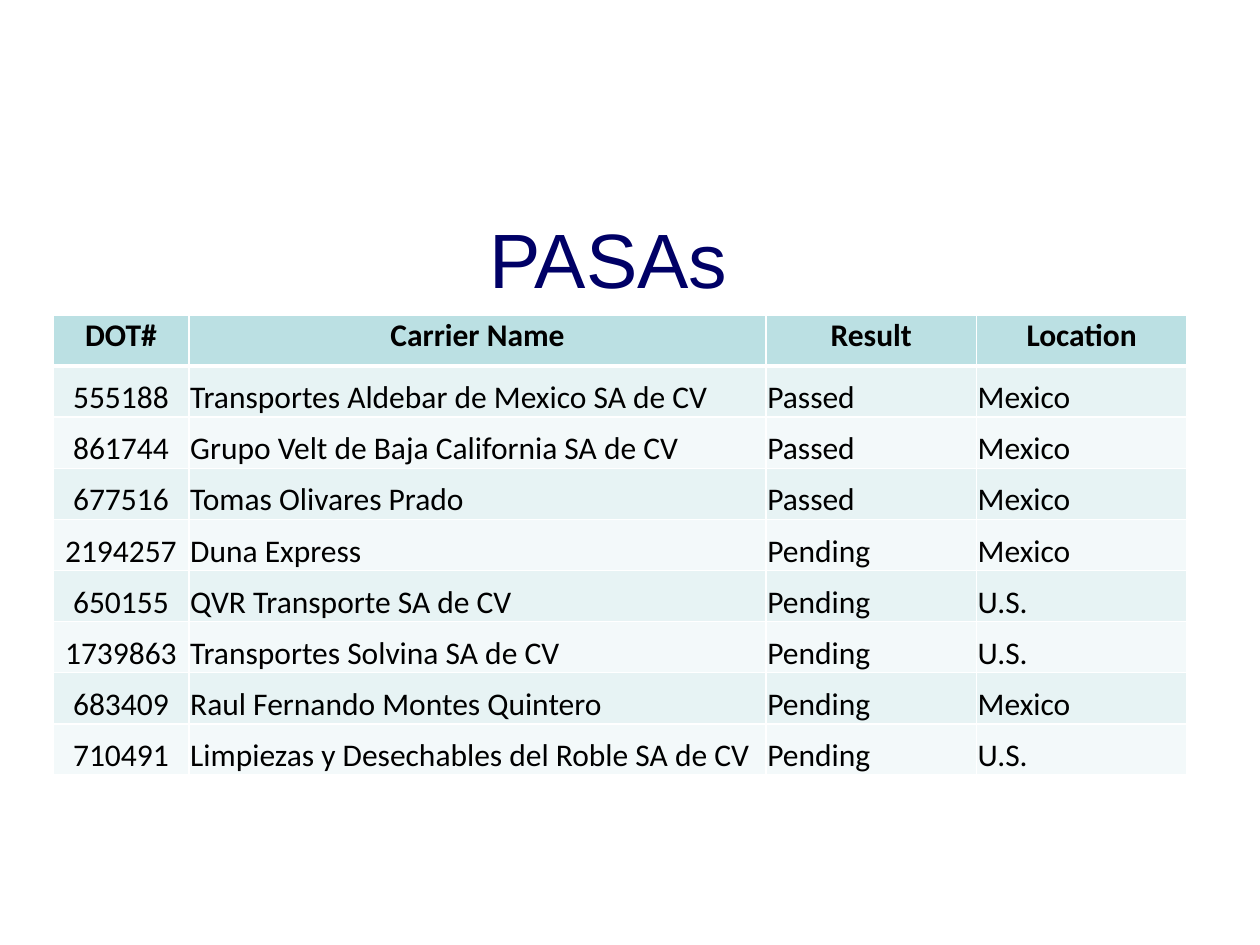
import pptx
import pptx.util
import pptx.dml.color
import pptx.enum.text
import pptx.oxml.ns
import lxml.etree

Inches, Pt = pptx.util.Inches, pptx.util.Pt
ALIGN = pptx.enum.text.PP_ALIGN
ANCHOR = pptx.enum.text.MSO_ANCHOR

# Content
TITLE = "PASAs"
HEADINGS = ("DOT#", "Carrier Name", "Result", "Location")
CARRIERS = [
    ("555188", "Transportes Aldebar de Mexico SA de CV", "Passed", "Mexico"),
    ("861744", "Grupo Velt de Baja California SA de CV", "Passed", "Mexico"),
    ("677516", "Tomas Olivares Prado", "Passed", "Mexico"),
    ("2194257", "Duna Express", "Pending", "Mexico"),
    ("650155", "QVR Transporte SA de CV", "Pending", "U.S."),
    ("1739863", "Transportes Solvina SA de CV", "Pending", "U.S."),
    ("683409", "Raul Fernando Montes Quintero", "Pending", "Mexico"),
    ("710491", "Limpiezas y Desechables del Roble SA de CV", "Pending", "U.S."),
]
COLUMN_WIDTHS = (1.08, 4.58, 1.67, 1.67)
TABLE_HEIGHT = 3.65
COLORS = {
    "title": "000066",
    "text": "000000",
    "heading": "BBE0E3",
    "odd": "E7F3F4",
    "even": "F3F9FA",
    "border": "FFFFFF",
}


def rgb(name):
    return pptx.dml.color.RGBColor.from_string(COLORS[name])


def set_font(paragraph, face, size, color, bold=False):
    font = paragraph.font
    font.name, font.size, font.bold = face, Pt(size), bold
    font.color.rgb = rgb(color)


def add_borders(cell, widths):
    """Draw the cell's sides; widths maps L, R, T and B to points."""
    properties = cell._tc.get_or_add_tcPr()
    qn = pptx.oxml.ns.qn
    for side, width in widths.items():
        line = lxml.etree.SubElement(properties, qn("a:ln" + side), w=str(Pt(width)))
        fill = lxml.etree.SubElement(line, qn("a:solidFill"))
        lxml.etree.SubElement(fill, qn("a:srgbClr"), val=COLORS["border"])


def fill_cell(cell, text, row, column):
    is_heading = row == 0
    add_borders(cell, {"L": 1, "R": 1, "T": 3 if row == 1 else 1, "B": 3 if is_heading else 1})
    cell.fill.solid()
    cell.fill.fore_color.rgb = rgb("heading" if is_heading else "odd" if row % 2 else "even")
    cell.margin_left = cell.margin_right = cell.margin_top = Inches(0.01)
    cell.margin_bottom = 0
    cell.vertical_anchor = ANCHOR.TOP if is_heading else ANCHOR.BOTTOM
    cell.text = text
    paragraph = cell.text_frame.paragraphs[0]
    paragraph.alignment = ALIGN.CENTER if is_heading or column == 0 else ALIGN.LEFT
    set_font(paragraph, "Calibri", 18, "text", bold=is_heading)


def main():
    deck = pptx.Presentation()
    deck.slide_width, deck.slide_height = Inches(10), Inches(7.5)
    slide = deck.slides.add_slide(deck.slide_layouts[5])

    # Title
    title = slide.shapes.title
    title.left, title.top = Inches(0.33), Inches(1.42)
    title.width, title.height = Inches(9), Inches(1.25)
    title.text_frame.text = TITLE
    title.text_frame.vertical_anchor = ANCHOR.MIDDLE
    heading = title.text_frame.paragraphs[0]
    heading.alignment = ALIGN.CENTER
    set_font(heading, "Arial", 44, "title")

    # Carrier table
    rows = [HEADINGS] + CARRIERS
    table = slide.shapes.add_table(
        len(rows), len(HEADINGS), Inches(0.42), Inches(2.5),
        Inches(sum(COLUMN_WIDTHS)), Inches(TABLE_HEIGHT)).table
    for column, width in zip(table.columns, COLUMN_WIDTHS):
        column.width = Inches(width)
    for row, values in enumerate(rows):
        table.rows[row].height = Inches(TABLE_HEIGHT / len(rows))
        for column, text in enumerate(values):
            fill_cell(table.cell(row, column), text, row, column)

    deck.save("out.pptx")


if __name__ == "__main__":
    main()
